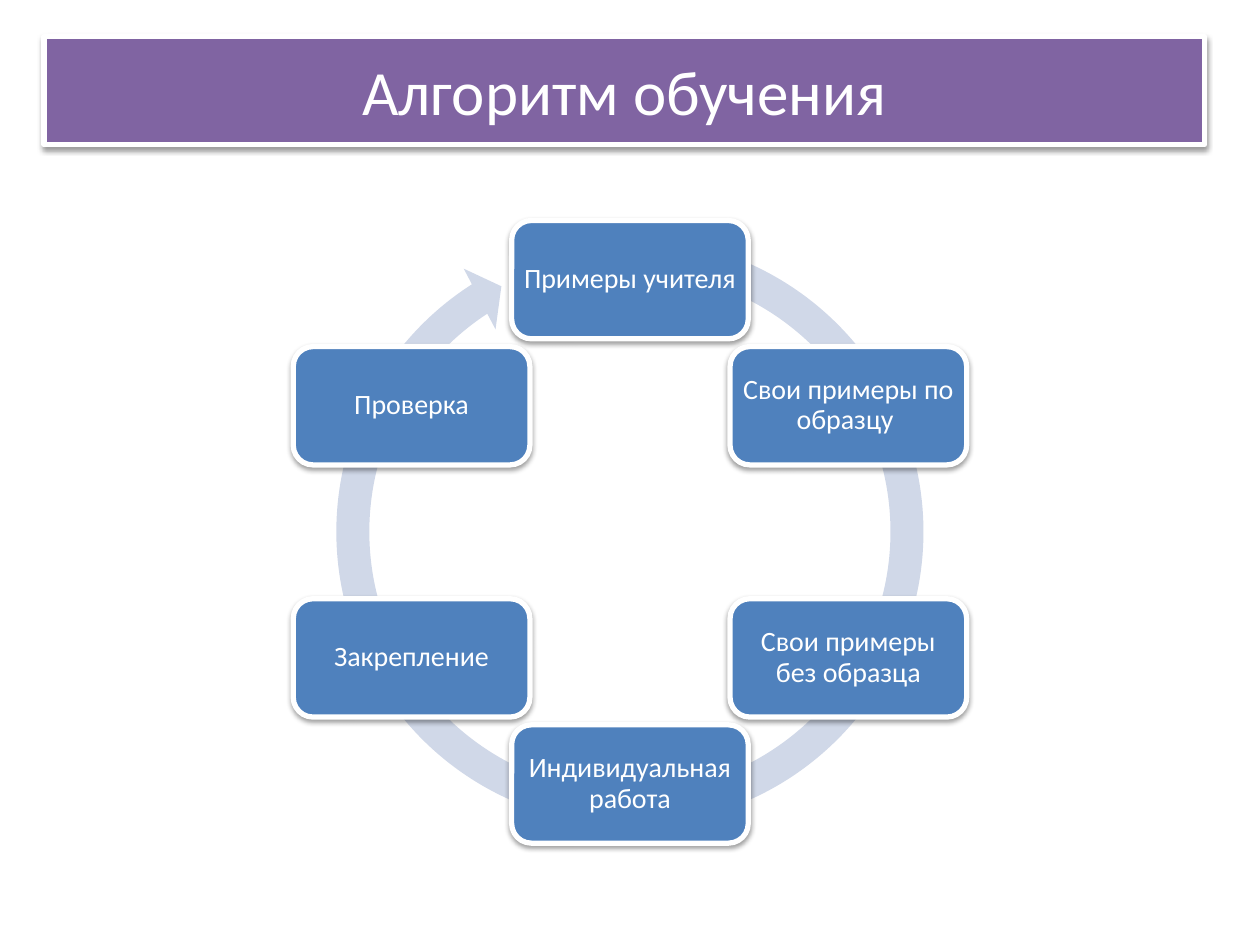
import math

import lxml.etree
import pptx
import pptx.dml.color
import pptx.enum.shapes
import pptx.enum.text
import pptx.oxml.ns
import pptx.util

Pt = pptx.util.Pt
SHAPES = pptx.enum.shapes.MSO_SHAPE
STEPS = [
    "Примеры учителя",
    "Свои примеры по образцу ",
    "Свои примеры без образца",
    "Индивидуальная работа",
    "Закрепление",
    "Проверка",
]


def rgb(value):
    """Return the colour for a hex string."""
    return pptx.dml.color.RGBColor.from_string(value)


def style_panel(panel, fill):
    """Give a panel its fill, white border and soft shadow below."""
    panel.fill.solid()
    panel.fill.fore_color.rgb = rgb(fill)
    panel.line.color.rgb = rgb("FFFFFF")
    panel.line.width = Pt(3)
    panel.shadow.inherit = False
    qn = pptx.oxml.ns.qn
    effects = panel.element.spPr.find(qn("a:effectLst"))
    shadow = lxml.etree.SubElement(
        effects, qn("a:outerShdw"), blurRad=str(Pt(3.1)), dist=str(Pt(1.6)),
        dir="5400000", rotWithShape="0")
    shade = lxml.etree.SubElement(shadow, qn("a:srgbClr"), val="000000")
    lxml.etree.SubElement(shade, qn("a:alpha"), val="38000")


def write_label(panel, label, size):
    """Write a centred white label in a panel."""
    frame = panel.text_frame
    frame.text = label
    frame.word_wrap = True
    frame.vertical_anchor = pptx.enum.text.MSO_ANCHOR.MIDDLE
    paragraph = frame.paragraphs[0]
    paragraph.alignment = pptx.enum.text.PP_ALIGN.CENTER
    font = paragraph.runs[0].font
    font.name = "Calibri"
    font.size = Pt(size)
    font.color.rgb = rgb("FFFFFF")


def place_title(slide, left, top, width, height):
    """Place the title banner in the given box."""
    title = slide.shapes.title
    title.left, title.top = Pt(left), Pt(top)
    title.width, title.height = Pt(width), Pt(height)
    style_panel(title, "8064A2")
    write_label(title, "Алгоритм обучения", 36)


def place_cycle(slide, left, top, size):
    """Place the circular arrow and the steps around it in a square box."""
    ring = slide.shapes.add_shape(
        SHAPES.CIRCULAR_ARROW, Pt(left), Pt(top), Pt(size), Pt(size))
    for index, value in enumerate([0.053, 3.126, 142.288, 171.266, 0.055]):
        ring.adjustments[index] = value
    ring.fill.solid()
    ring.fill.fore_color.rgb = rgb("D0D8E8")
    ring.line.fill.background()
    ring.shadow.inherit = False

    step_width, step_height = 135.2, 67.6
    radius = (size - step_height) / 2
    for index, label in enumerate(STEPS):
        angle = 2 * math.pi * index / len(STEPS)
        center_x = left + size / 2 + radius * math.sin(angle)
        center_y = top + size / 2 - radius * math.cos(angle)
        step = slide.shapes.add_shape(
            SHAPES.ROUNDED_RECTANGLE,
            Pt(center_x - step_width / 2), Pt(center_y - step_height / 2),
            Pt(step_width), Pt(step_height))
        style_panel(step, "4F81BD")
        write_label(step, label, 16)
        frame = step.text_frame
        frame.margin_left = frame.margin_right = Pt(1.5)
        frame.margin_top = frame.margin_bottom = Pt(1.5)
        frame.paragraphs[0].line_spacing = 0.9


def main():
    """Build the slide and save it."""
    presentation = pptx.Presentation()
    presentation.slide_width, presentation.slide_height = Pt(720), Pt(540)
    slide = presentation.slides.add_slide(presentation.slide_layouts[5])
    place_title(slide, 25.2, 20.9, 663.1, 61.9)
    place_cycle(slide, 182.1, 126, 355.8)
    presentation.save("out.pptx")


if __name__ == "__main__":
    main()
